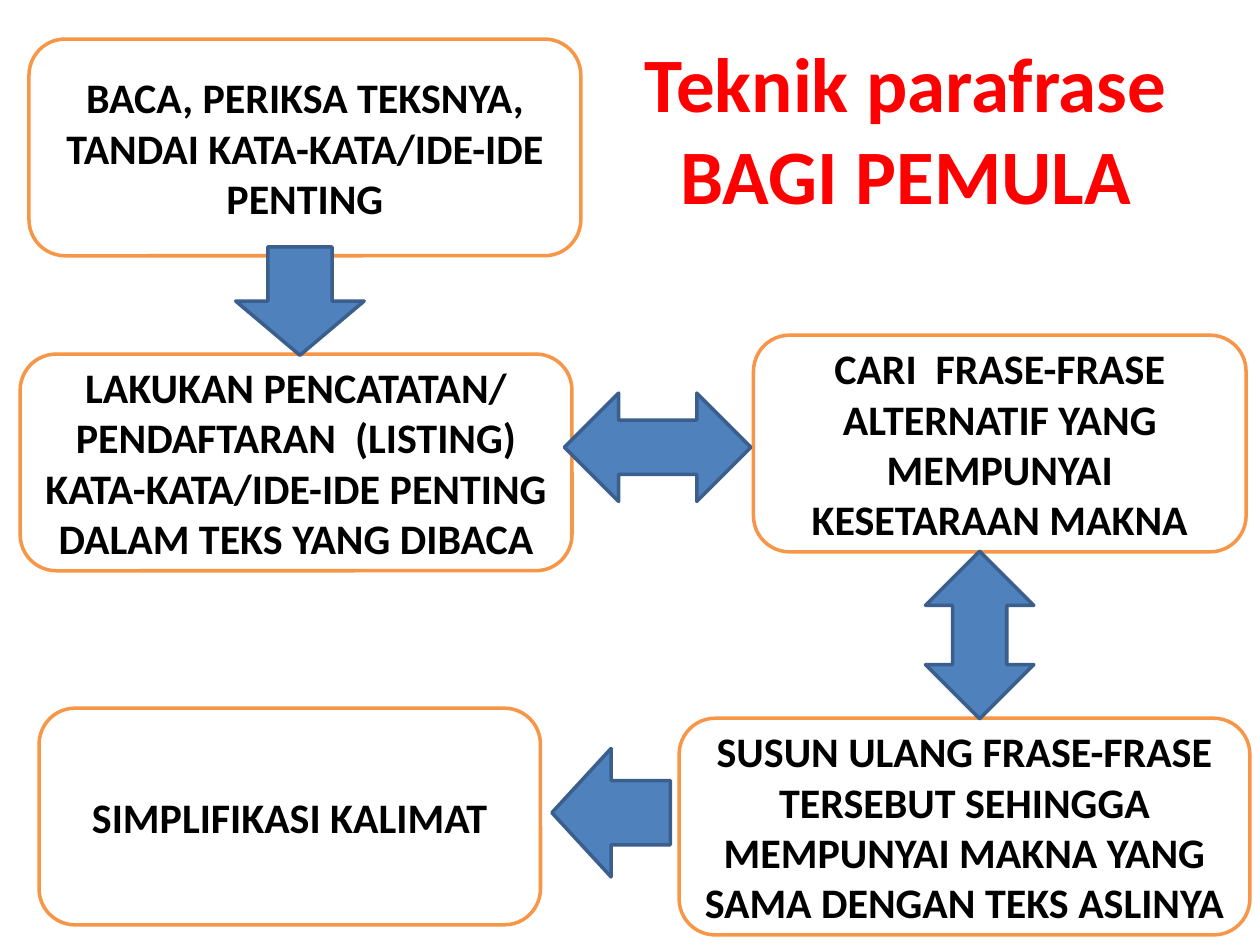
import pptx
import pptx.util
import pptx.dml.color
import pptx.enum.shapes
import pptx.enum.text

Inches = pptx.util.Inches
SHAPE = pptx.enum.shapes.MSO_SHAPE
BOX_HEIGHT = 1.72


def color(value):
    return pptx.dml.color.RGBColor.from_string(value)


class SlideBuilder:
    box_style = {"fill": "FFFFFF", "line": "F79646"}
    arrow_style = {"fill": "4F81BD", "line": "3A5F8C"}
    box_font = {"name": "Calibri", "size": pptx.util.Pt(24), "bold": True}
    title_font = {"name": "Calibri", "size": pptx.util.Pt(44), "bold": True}

    def __init__(self, prs):
        self.s = prs.slides.add_slide(prs.slide_layouts[5])

    def label(self, sp, text, font, text_color):
        tf = sp.text_frame
        tf.word_wrap = True
        tf.vertical_anchor = pptx.enum.text.MSO_ANCHOR.MIDDLE
        p = tf.paragraphs[0]
        p.alignment = pptx.enum.text.PP_ALIGN.CENTER
        r = p.add_run()
        r.text = text
        for name, value in font.items():
            setattr(r.font, name, value)
        r.font.color.rgb = color(text_color)

    def shape(self, kind, left, top, width, height, style):
        sp = self.s.shapes.add_shape(
            kind, Inches(left), Inches(top), Inches(width), Inches(height))
        sp.shadow.inherit = False
        sp.fill.solid()
        sp.fill.fore_color.rgb = color(style["fill"])
        sp.line.color.rgb = color(style["line"])
        sp.line.width = pptx.util.Pt(2)
        return sp

    def title(self, text, left, top, width, height):
        sp = self.s.shapes.title
        place = {"left": left, "top": top, "width": width, "height": height}
        for name, value in place.items():
            setattr(sp, name, Inches(value))
        self.label(sp, text, self.title_font, "FF0000")

    def box(self, text, left, top, width):
        sp = self.shape(SHAPE.ROUNDED_RECTANGLE, left, top, width, BOX_HEIGHT, self.box_style)
        self.label(sp, text, self.box_font, "000000")

    def arrow(self, kind, left, top, width, height, rotation=0):
        sp = self.shape(kind, left, top, width, height, self.arrow_style)
        sp.rotation = rotation


def main():
    prs = pptx.Presentation()
    prs.slide_width, prs.slide_height = Inches(10), Inches(7.5)
    slide = SlideBuilder(prs)
    slide.title("Teknik parafrase BAGI PEMULA", 4.84, 0.31, 4.7, 1.41)

    steps = [
        ("BACA, PERIKSA TEKSNYA, TANDAI KATA-KATA/IDE-IDE PENTING", 0.23, 0.31, 4.38),
        ("LAKUKAN PENCATATAN/ PENDAFTARAN  (LISTING) KATA-KATA/IDE-IDE PENTING "
         "DALAM TEKS YANG DIBACA", 0.16, 2.81, 4.38),
        ("CARI  FRASE-FRASE ALTERNATIF YANG MEMPUNYAI KESETARAAN MAKNA", 5.98, 2.66, 3.91),
        ("SUSUN ULANG FRASE-FRASE TERSEBUT SEHINGGA MEMPUNYAI MAKNA YANG "
         "SAMA DENGAN TEKS ASLINYA", 5.39, 5.7, 4.53),
        ("SIMPLIFIKASI KALIMAT", 0.31, 5.62, 3.98),
    ]
    for step in steps:
        slide.box(*step)

    arrows = [
        (SHAPE.RIGHT_ARROW, 1.95, 1.88, 0.86, 1.02, 90),
        (SHAPE.LEFT_RIGHT_ARROW, 4.48, 3.12, 1.48, 0.86),
        (SHAPE.LEFT_RIGHT_ARROW, 7.11, 4.61, 1.33, 0.86, 90),
        (SHAPE.RIGHT_ARROW, 4.38, 5.94, 0.94, 1.02, 180),
    ]
    for arrow in arrows:
        slide.arrow(*arrow)

    prs.save("out.pptx")


if __name__ == "__main__":
    main()
